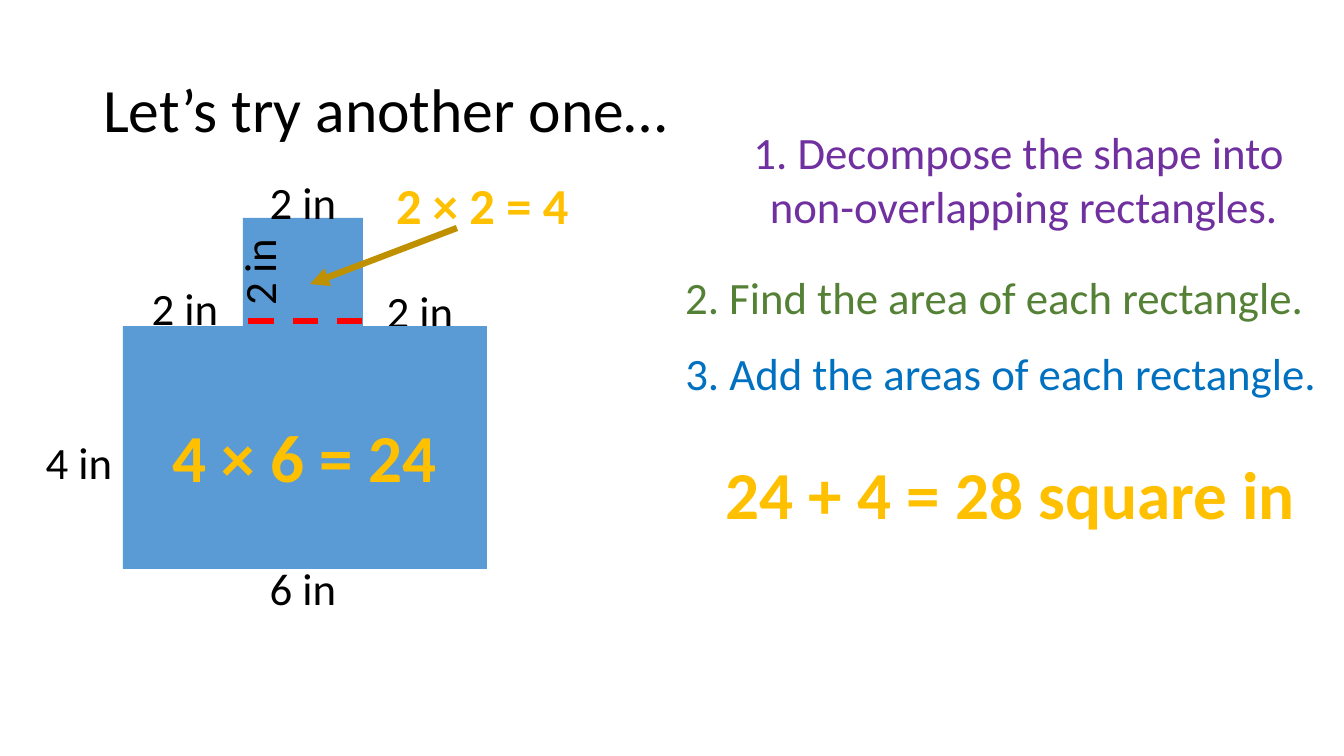
from dataclasses import dataclass

from lxml import etree
from pptx import Presentation
from pptx import util as u
from pptx.dml.color import RGBColor
from pptx.enum import dml, shapes, text
from pptx.oxml.ns import qn


@dataclass(frozen=True)
class Theme:
    font: str = "Calibri"
    black: str = "000000"
    blue: str = "5B9BD5"
    gold: str = "FFC000"
    dark_gold: str = "BF9000"
    red: str = "FF0000"
    purple: str = "7030A0"
    green: str = "548135"
    step_blue: str = "0070C0"
    title: int = 44
    body: int = 32
    answer: int = 48
    small_answer: int = 36
    line: float = 4.5


THEME = Theme()
EMU_PER_PX = 914400 / 100.8
SLIDE_SIZE = (1344, 756)
LABEL_SIZE = (88, 65)

TITLE = ("Let’s try another one…", (93, 40, 1159, 146))
OUTER_LABELS = [
    ("2 in", (141, 276), 0),
    ("4 in", (35, 430), 0),
    ("2 in", (376, 279), 0),
    ("6 in", (259, 556), 0),
]
INNER_LABELS = [
    ("2 in", (259, 170), 0),
    ("2 in", (215, 240), 270),
]
STEPS = [
    ("1. Decompose the shape into \nnon-overlapping rectangles.", (741, 120, 566, 119), THEME.purple),
    ("2. Find the area of each rectangle.", (672, 265, 645, 65), THEME.green),
    ("3. Add the areas of each rectangle.", (672, 341, 658, 65), THEME.step_blue),
]
TOTAL = ("24 + 4 = 28 square in", (712, 447, 597, 92), THEME.answer)
AREAS = [
    ("4 × 6 = 24 ", (161, 410, 302, 92), THEME.answer),
    ("2 × 2 = 4 ", (385, 169, 206, 72), THEME.small_answer),
]
RECTANGLES = [(123, 326, 364, 243), (243, 218, 120, 110)]
CUT_LINE = (362, 321, 242, 321)
ARROW = (457, 228, 310, 284)


def px(lengths):
    return [u.Emu(round(length * EMU_PER_PX)) for length in lengths]


def format_text(text_frame, size, color, align, bold=False):
    for paragraph in text_frame.paragraphs:
        paragraph.alignment = align
        for run in paragraph.runs:
            run.font.name = THEME.font
            run.font.size = u.Pt(size)
            run.font.bold = bold
            run.font.color.rgb = RGBColor.from_string(color)


def add_title(slide, words, box):
    title = slide.shapes.title
    title.left, title.top, title.width, title.height = px(box)
    title.text_frame.text = words
    title.text_frame.auto_size = text.MSO_AUTO_SIZE.NONE
    title.text_frame.vertical_anchor = text.MSO_ANCHOR.MIDDLE
    title.text_frame.paragraphs[0].line_spacing = 0.9
    format_text(title.text_frame, THEME.title, THEME.black, text.PP_ALIGN.LEFT)


def add_text(slide, words, box, size, color, bold=False, rotation=0):
    shape = slide.shapes.add_textbox(*px(box))
    shape.rotation = rotation
    shape.text_frame.word_wrap = True
    shape.text_frame.text = words
    format_text(shape.text_frame, size, color, text.PP_ALIGN.CENTER, bold)


def add_labels(slide, labels):
    for words, corner, rotation in labels:
        add_text(slide, words, corner + LABEL_SIZE, THEME.body, THEME.black, rotation=rotation)


def add_rectangle(slide, box):
    shape = slide.shapes.add_shape(shapes.MSO_SHAPE.RECTANGLE, *px(box))
    shape.shadow.inherit = False
    shape.fill.solid()
    shape.fill.fore_color.rgb = RGBColor.from_string(THEME.blue)
    shape.line.fill.background()


def add_line(slide, ends, color):
    connector = slide.shapes.add_connector(shapes.MSO_CONNECTOR.STRAIGHT, *px(ends))
    connector.line.color.rgb = RGBColor.from_string(color)
    connector.line.width = u.Pt(THEME.line)
    etree.SubElement(connector.element.spPr, qn("a:effectLst"))
    return connector


def main():
    presentation = Presentation()
    presentation.slide_width, presentation.slide_height = px(SLIDE_SIZE)
    slide = presentation.slides.add_slide(presentation.slide_layouts.get_by_name("Title Only"))

    add_title(slide, *TITLE)
    add_labels(slide, OUTER_LABELS)
    for words, box, color in STEPS:
        add_text(slide, words, box, THEME.body, color)
    add_text(slide, *TOTAL, THEME.gold, bold=True)
    for box in RECTANGLES:
        add_rectangle(slide, box)
    add_labels(slide, INNER_LABELS)
    cut_line = add_line(slide, CUT_LINE, THEME.red)
    cut_line.line.dash_style = dml.MSO_LINE.DASH
    for words, box, size in AREAS:
        add_text(slide, words, box, size, THEME.gold, bold=True)
    arrow = add_line(slide, ARROW, THEME.dark_gold)
    etree.SubElement(arrow.line._get_or_add_ln(), qn("a:tailEnd"), type="triangle")

    presentation.save("out.pptx")


if __name__ == "__main__":
    main()
